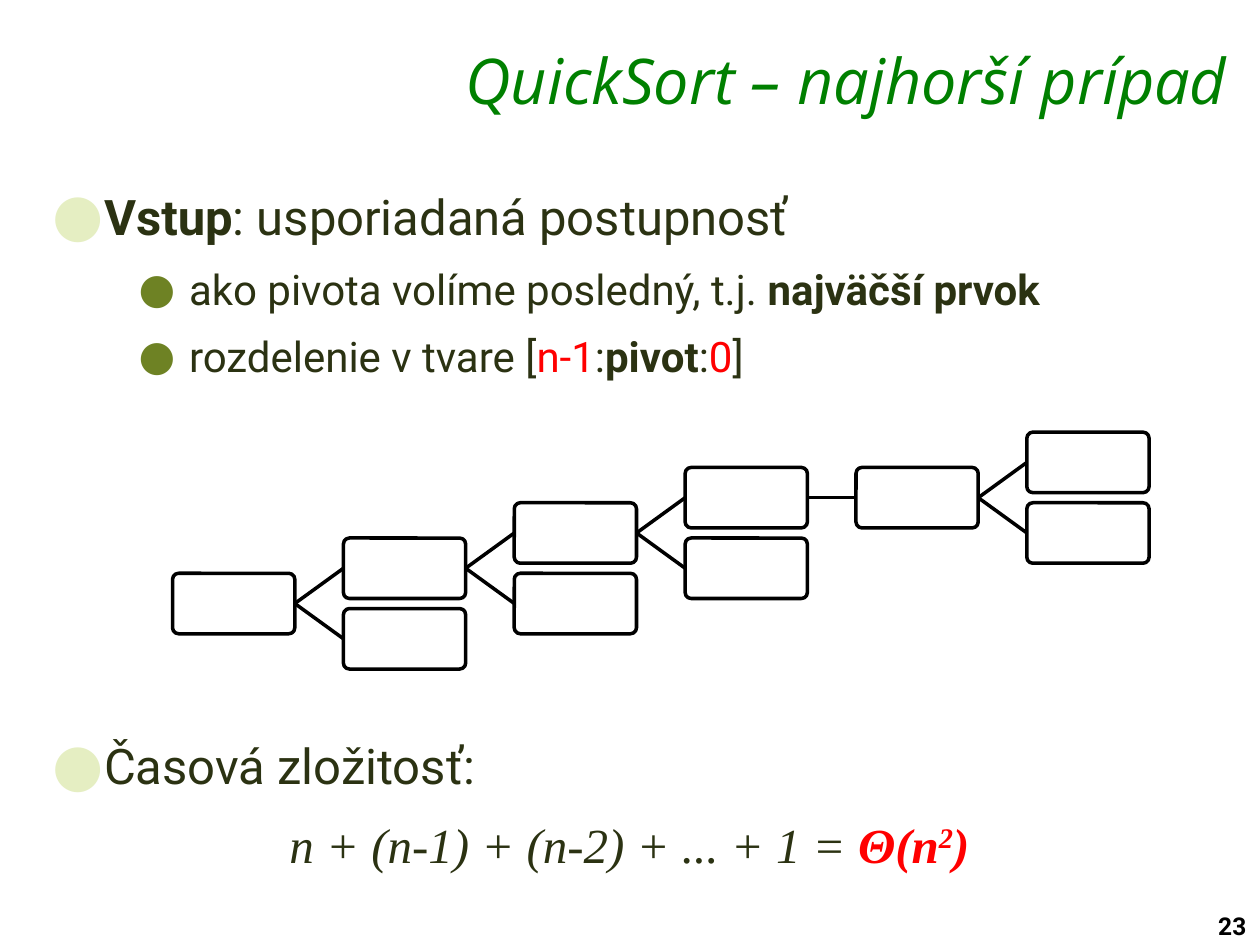
"""Build the slide on the worst case of QuickSort."""
from lxml import etree
from pptx import Presentation
from pptx.dml.color import RGBColor
from pptx.enum import shapes as kinds, text as txt
from pptx.oxml.ns import qn
from pptx.util import Inches, Pt

DARK, RED, BLACK = "2B3212", "FF0000", "000000"
PALE, OLIVE = "E5EEC2", "6E8224"


def rgb(code):
    return RGBColor.from_string(code)


def style(font, name, size, color):
    font.name, font.size = name, Pt(size)
    font.color.rgb = rgb(color)


deck = Presentation()
deck.slide_width, deck.slide_height = Inches(10), Inches(7.5)
slide = deck.slides.add_slide(deck.slide_layouts[1])

title = slide.shapes.title
title.left, title.top = Inches(2.29), Inches(0.31)
title.width, title.height = Inches(7.55), Inches(0.58)
frame = title.text_frame
frame.text = "QuickSort – najhorší prípad"
frame.auto_size = txt.MSO_AUTO_SIZE.NONE
frame.vertical_anchor = txt.MSO_ANCHOR.TOP
frame.margin_top = Inches(0.02)
head = frame.paragraphs[0]
head.alignment = txt.PP_ALIGN.RIGHT
style(head.font, "Open Sans", 36, "008000")
head.font.italic = True

body = slide.placeholders[1]
body.left, body.top = Inches(0.32), Inches(1.43)
body.width, body.height = Inches(9.35), Inches(5.77)
frame = body.text_frame
frame.auto_size = txt.MSO_AUTO_SIZE.NONE
frame.vertical_anchor = txt.MSO_ANCHOR.TOP

# Each run is (text, bold, colour); each item is (level, bullet colour, space before, font, runs).
items = [
    (0, PALE, 0, "Roboto",
     [("Vstup", True, DARK), (": usporiadaná postupnosť", False, DARK)]),
    (1, OLIVE, 4.8, "Roboto",
     [("ako pivota volíme posledný, t.j. ", False, DARK), ("najväčší prvok", True, DARK)]),
    (1, OLIVE, 4.8, "Roboto",
     [("rozdelenie v tvare [", False, DARK), ("n-1", False, RED), (":", False, DARK),
      ("pivot", True, DARK), (":", False, DARK), ("0", False, RED), ("]", False, DARK)]),
    (0, PALE, 198, "Roboto", [("Časová zložitosť:", False, DARK)]),
    (0, None, 5.6, "Times New Roman",
     [("n + (n-1) + (n-2) + ... + 1 = ", False, DARK), ("Θ(n", True, RED),
      ("2", True, RED), (")", True, RED)]),
]
for i, (level, dot, gap, face, runs) in enumerate(items):
    para = frame.paragraphs[0] if i == 0 else frame.add_paragraph()
    para.level = level
    size = (28, 24)[level]
    props = para._p.get_or_add_pPr()
    props.set("marL", str(Inches((0.39, 1.08)[level])))
    props.set("indent", str(Inches((-0.39, -0.4)[level])))
    if dot:
        tint = etree.SubElement(props, qn("a:buClr"))
        etree.SubElement(tint, qn("a:srgbClr"), val=dot)
        etree.SubElement(props, qn("a:buSzPct"), val=("120000", "100000")[level])
        etree.SubElement(props, qn("a:buFont"), typeface="Roboto")
        etree.SubElement(props, qn("a:buChar"), char="●")
    else:
        etree.SubElement(props, qn("a:buNone"))
        para.alignment = txt.PP_ALIGN.CENTER
    para.space_before, para.space_after = Pt(gap), Pt(size * 0.2)
    style(para.font, face, size, DARK)
    para.font.italic = dot is None
    for words, bold, color in runs:
        run = para.add_run()
        run.text = words
        run.font.bold = bold
        run.font.color.rgb = rgb(color)
        if words == "2":
            run._r.get_or_add_rPr().set("baseline", "30000")

last = None
for col, rise in enumerate([0, 1, 2, 3, 3, 4]):
    nodes = []
    for row in range(1 if col in (0, 4) else 2):
        node = slide.shapes.add_shape(
            kinds.MSO_SHAPE.ROUNDED_RECTANGLE,
            Inches(1.37 + 6.78 / 5 * col), Inches(4.55 - 0.28 * rise + 0.56 * row),
            Inches(0.97), Inches(0.48))
        node.adjustments[0] = 0.1
        node.shadow.inherit = False
        node.fill.solid()
        node.fill.fore_color.rgb = rgb("FFFFFF")
        node.line.color.rgb = rgb(BLACK)
        node.line.width = Pt(2)
        nodes.append(node)
        if last is not None:
            link = slide.shapes.add_connector(kinds.MSO_CONNECTOR.STRAIGHT, 0, 0, 0, 0)
            link.begin_connect(last, 3)
            link.end_connect(node, 1)
            link.line.color.rgb = rgb(BLACK)
            link.line.width = Pt(2)
            etree.SubElement(link._element.spPr, qn("a:effectLst"))
    last = nodes[0]

box = slide.shapes.add_textbox(Inches(9.57), Inches(7.18), Inches(0.51), Inches(0.33))
box.text_frame.text = "23"
page = box.text_frame.paragraphs[0]
style(page.font, "Roboto", 14, BLACK)
page.font.bold = True

deck.save("out.pptx")
